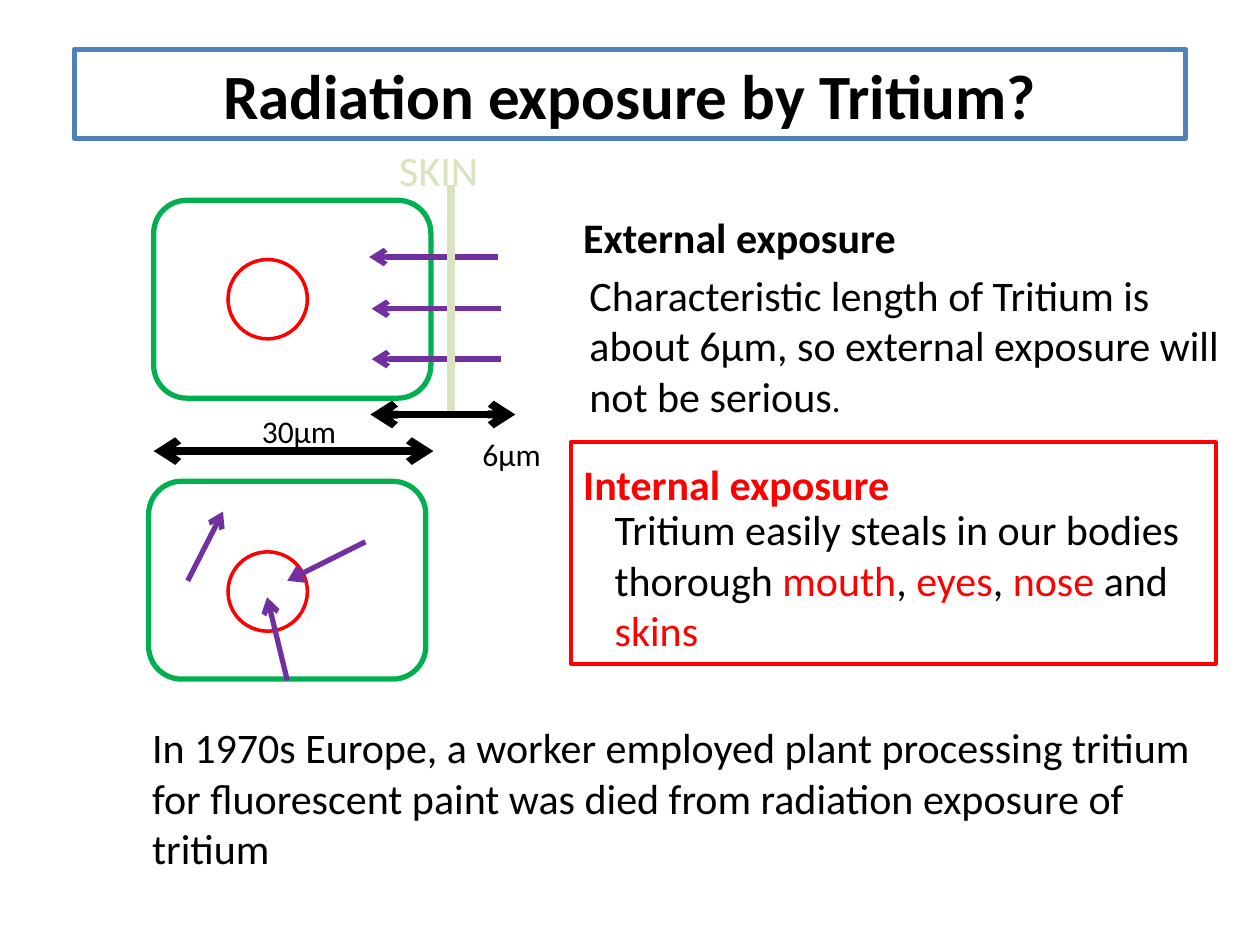
import pptx
import pptx.util
import pptx.dml.color
import pptx.enum.shapes
import pptx.enum.text
import pptx.oxml.ns
import lxml.etree

Inches = pptx.util.Inches
KIND = pptx.enum.shapes.MSO_SHAPE
COLORS = {
    "black": "000000", "red": "FF0000", "green": "00B050",
    "violet": "7030A0", "skin": "D7E4BD", "blue": "4F81BD",
}


def rgb(name):
    """Return the named colour."""
    return pptx.dml.color.RGBColor.from_string(COLORS[name])


def outline(slide, kind, box, color, width):
    """Draw an unfilled shape."""
    shape = slide.shapes.add_shape(kind, *map(Inches, box))
    shape.shadow.inherit = False
    shape.fill.background()
    shape.line.color.rgb = rgb(color)
    shape.line.width = pptx.util.Pt(width)
    return shape


def line(slide, start, end, color, width, ends=()):
    """Draw a straight line with open arrowheads at the named ends."""
    link = slide.shapes.add_connector(
        pptx.enum.shapes.MSO_CONNECTOR.STRAIGHT, *map(Inches, start + end))
    link.line.color.rgb = rgb(color)
    link.line.width = pptx.util.Pt(width)
    qn = pptx.oxml.ns.qn
    for tag in ends:
        lxml.etree.SubElement(link.line._ln, qn("a:" + tag), type="arrow")
    lxml.etree.SubElement(link._element.spPr, qn("a:effectLst"))


def write(frame, parts, size, bold=False):
    """Write (text, colour) parts as one paragraph."""
    para = frame.paragraphs[0]
    for text, color in parts:
        run = para.add_run()
        run.text = text
        run.font.name = "Calibri"
        run.font.size = pptx.util.Pt(size)
        run.font.bold = bold
        run.font.color.rgb = rgb(color)
    return para


def label(slide, box, parts, size=24, bold=False, wrap=False):
    """Add a text box."""
    frame = slide.shapes.add_textbox(*map(Inches, box)).text_frame
    frame.word_wrap = wrap
    return write(frame, parts, size, bold)


def cell(slide, left, top, core):
    """Draw a cell with its nucleus."""
    outline(slide, KIND.ROUNDED_RECTANGLE, (left, top, 2.2, 1.57), "green", 3)
    outline(slide, KIND.OVAL, (1.81, core, 0.63, 0.63), "red", 2)


def title(slide):
    """Draw the framed title."""
    shape = outline(slide, KIND.RECTANGLE, (0.59, 0.39, 8.82, 0.71), "blue", 3)
    para = write(shape.text_frame, [("Radiation exposure by Tritium?", "black")], 36, True)
    para.alignment = pptx.enum.text.PP_ALIGN.CENTER


def cells(slide):
    """Draw both cells with their rays, the skin and the scales."""
    cell(slide, 1.18, 3.82, 4.38)
    cell(slide, 1.22, 1.59, 2.06)
    rays = [
        ((2.28, 5.4), (2.12, 4.74)), ((1.49, 4.61), (1.77, 4.06)),
        ((2.9, 4.3), (2.28, 4.61)), ((3.98, 2.45), (2.95, 2.45)),
        ((3.98, 2.85), (2.95, 2.85)), ((3.95, 2.04), (2.93, 2.04)),
    ]
    for start, end in rays:
        line(slide, start, end, "violet", 3, ["tailEnd"])
    line(slide, (3.58, 1.47), (3.58, 3.28), "skin", 4.5)
    label(slide, (3.07, 1.1, 1.02, 0.5), [("SKIN", "skin")])
    for left, right, y in [(2.94, 4.09, 3.29), (1.22, 3.44, 3.58)]:
        line(slide, (left, y), (right, y), "black", 4.5, ["headEnd", "tailEnd"])
    label(slide, (3.73, 3.4, 0.71, 0.4), [("6μm", "black")], 18)
    label(slide, (1.98, 3.22, 0.84, 0.4), [("30μm", "black")], 18)


def notes(slide):
    """Write the explanations."""
    label(slide, (4.53, 1.63, 2.94, 0.5), [("External exposure", "black")], bold=True)
    para = label(slide, (4.58, 2.09, 5.21, 1.31), [
        ("Characteristic length of Tritium is about 6μm, so external exposure "
         "will not be serious", "black"), (".", "black")], wrap=True)
    para.runs[-1].font.size = pptx.util.Pt(20)
    label(slide, (4.53, 3.59, 2.9, 0.5), [("Internal exposure", "red")], bold=True)
    label(slide, (4.78, 3.95, 5, 1.31), [
        ("Tritium easily steals in our bodies thorough ", "black"),
        ("mouth", "red"), (", ", "black"), ("eyes", "red"), (", ", "black"),
        ("nose", "red"), (" and ", "black"), ("skins", "red")], wrap=True)
    outline(slide, KIND.RECTANGLE, (4.53, 3.51, 5.12, 1.76), "red", 2)
    label(slide, (1.11, 5.68, 8.5, 1.31), [
        ("In 1970s Europe, a worker employed plant processing tritium for "
         "fluorescent paint was died from radiation exposure of tritium",
         "black")], wrap=True)


def main():
    """Build and save the slide."""
    deck = pptx.Presentation()
    deck.slide_width, deck.slide_height = Inches(10), Inches(7.5)
    slide = deck.slides.add_slide(deck.slide_layouts[6])
    title(slide)
    cells(slide)
    notes(slide)
    deck.save("out.pptx")


if __name__ == "__main__":
    main()
